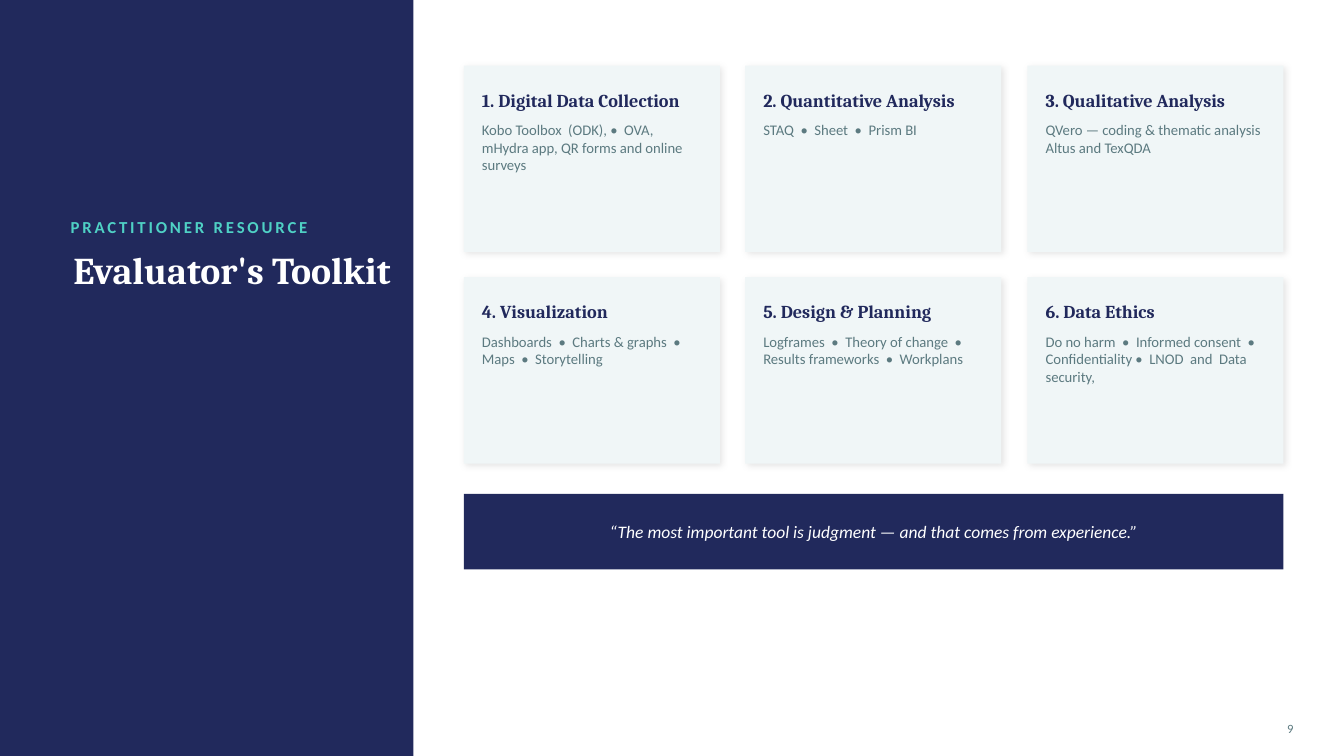
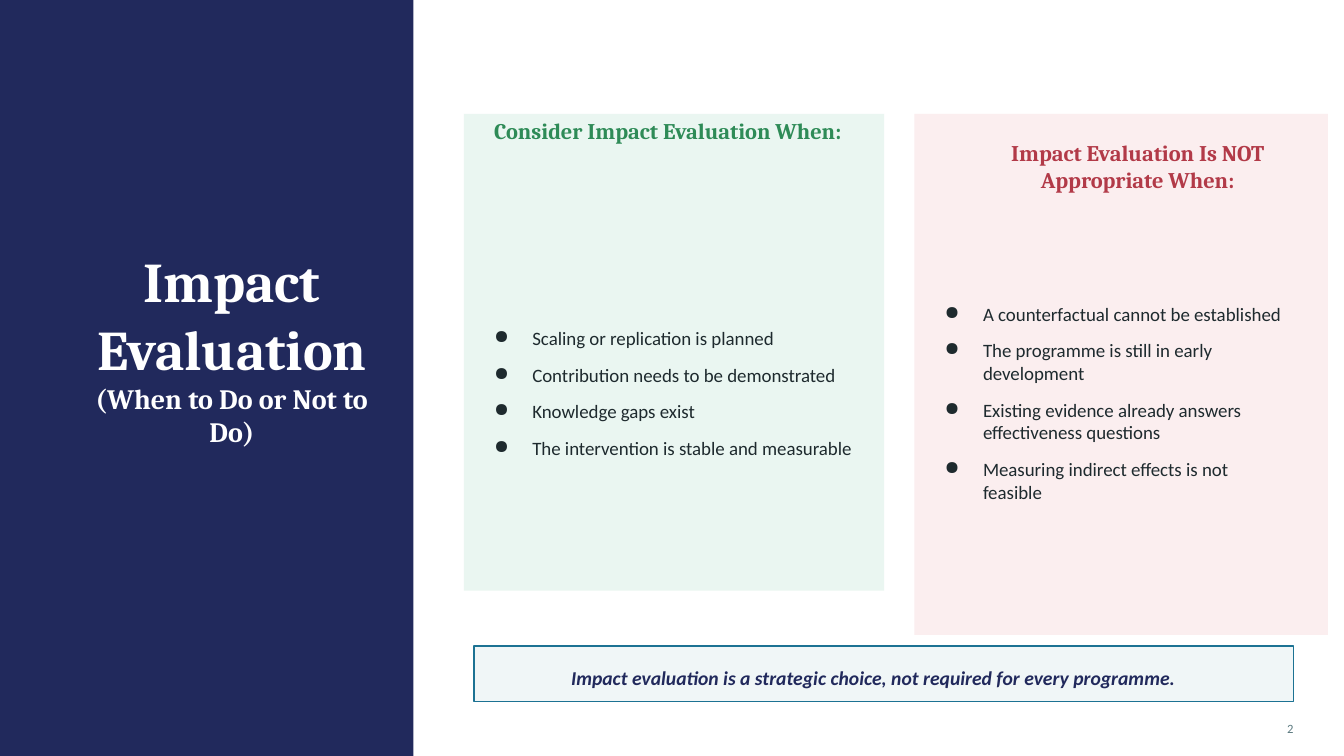
from lxml import etree
from pptx import Presentation
from pptx import util as u
from pptx.dml.color import RGBColor
from pptx.enum import shapes, text
from pptx.oxml import ns

PX = 9144
NAVY, MIST, SLATE, WHITE = "21295C", "F0F6F7", "5C7A80", "FFFFFF"
INK, TEAL, BLUE = "1E2A2E", "4FD1C5", "1C7293"
GREEN, MINT, RED, ROSE = "2E8B57", "EAF6F1", "B23A48", "FBEEEF"
HEAD, BODY = "Cambria", "Calibri"
LEFT, CENTER, RIGHT = text.PP_ALIGN.LEFT, text.PP_ALIGN.CENTER, text.PP_ALIGN.RIGHT
TOP, MIDDLE = text.MSO_ANCHOR.TOP, text.MSO_ANCHOR.MIDDLE

CARDS = [
    ("1. Digital Data Collection",
     ["Kobo Toolbox  (ODK), •  OVA, mHydra app, QR forms and online surveys"]),
    ("2. Quantitative Analysis", ["STAQ  •  Sheet  •  Prism BI"]),
    ("3. Qualitative Analysis",
     ["QVero — coding & thematic analysis", "Altus and TexQDA"]),
    ("4. Visualization",
     ["Dashboards  •  Charts & graphs  •  Maps  •  Storytelling"]),
    ("5. Design & Planning",
     ["Logframes  •  Theory of change  •  Results frameworks  •  Workplans"]),
    ("6. Data Ethics",
     ["Do no harm  •  Informed consent  •  Confidentiality •  LNOD  and  Data security,"]),
]
DO = ["Scaling or replication is planned",
      "Contribution needs to be demonstrated",
      "Knowledge gaps exist",
      "The intervention is stable and measurable"]
AVOID = ["A counterfactual cannot be established",
         "The programme is still in early development",
         "Existing evidence already answers effectiveness questions",
         "Measuring indirect effects is not feasible"]


def rgb(code):
    """Turn a hex string into a colour."""
    return RGBColor.from_string(code)


def emu(box):
    """Turn px lengths into EMU."""
    return [u.Emu(n * PX) for n in box]


def shift(box, part):
    """Place a part relative to the corner of a box."""
    return box[0] + part[0], box[1] + part[1], part[2], part[3]


def rect(slide, box, fill, line=None):
    """Draw a flat rectangle."""
    shape = slide.shapes.add_shape(shapes.MSO_SHAPE.RECTANGLE, *emu(box))
    shape.shadow.inherit = False
    shape.fill.solid()
    shape.fill.fore_color.rgb = rgb(fill)
    if line:
        shape.line.color.rgb = rgb(line)
        shape.line.width = u.Pt(1)
    else:
        shape.line.fill.background()
    return shape


def shade(shape):
    """Give a shape a soft shadow."""
    effects = shape._element.spPr.find(ns.qn("a:effectLst"))
    outer = etree.SubElement(
        effects, ns.qn("a:outerShdw"), blurRad=str(u.Pt(5)),
        dist=str(u.Pt(2)), dir="2700000", algn="bl", rotWithShape="0")
    black = etree.SubElement(outer, ns.qn("a:srgbClr"), val="000000")
    etree.SubElement(black, ns.qn("a:alpha"), val="10000")


def frame(shape, anchor):
    """Set wrapping, anchor and zero margins of a text frame."""
    body = shape.text_frame
    body.word_wrap = True
    body.auto_size = text.MSO_AUTO_SIZE.NONE
    body.vertical_anchor = anchor
    body.margin_left = body.margin_top = body.margin_right = body.margin_bottom = 0
    return body


def style(font, size, color, name=BODY, bold=False, italic=False):
    """Set the look of a font."""
    font.size, font.name = u.Pt(size), name
    font.bold, font.italic = bold, italic
    font.color.rgb = rgb(color)


def dot(para):
    """Make a paragraph a bulleted item."""
    props = para._p.get_or_add_pPr()
    props.set("marL", str(38 * PX))
    props.set("indent", str(-38 * PX))
    etree.SubElement(props, ns.qn("a:buChar"), char="●")
    para.space_after = u.Pt(10)


def write(slide, box, lines, size, color, name=BODY, bold=False, italic=False,
          align=LEFT, anchor=MIDDLE, dots=False):
    """Write paragraphs of one style in a box."""
    body = frame(slide.shapes.add_textbox(*emu(box)), anchor)
    for i, line in enumerate(lines):
        para = body.paragraphs[0] if i == 0 else body.add_paragraph()
        para.text, para.alignment = line, align
        if dots:
            dot(para)
        style(para.font, size, color, name, bold, italic)
    return body


def base(deck, parts, page):
    """Add a slide with side panel, title and page number."""
    slide = deck.slides.add_slide(deck.slide_layouts[5])
    panel = rect(slide, (0, 0, 410, 750), NAVY)
    slide.shapes._spTree.insert(2, panel._element)
    title = slide.shapes.title
    title.left, title.top, title.width, title.height = emu((70, 245, 320, 190))
    para = frame(title, TOP).paragraphs[0]
    para.alignment = CENTER
    for words, size in parts:
        run = para.add_run()
        run.text = words
        style(run.font, size, WHITE, HEAD, True)
    write(slide, (1233, 708, 50, 30), [page], 9, SLATE, align=RIGHT)
    return slide


def card(slide, box, head, lines):
    """Draw one tool card."""
    shade(rect(slide, box, MIST))
    wide = box[2] - 36
    write(slide, shift(box, (18, 14, wide, 40)), [head], 13, NAVY, HEAD, True)
    write(slide, shift(box, (18, 55, wide, 115)), lines, 10.5, SLATE, anchor=TOP)


def grid(slide, box):
    """Lay the cards out in three columns and two rows."""
    left, top, wide, high = box
    w, h = 254, 185
    for i, (head, lines) in enumerate(CARDS):
        row, col = divmod(i, 3)
        spot = left + col * (wide - w) // 2, top + row * (high - h), w, h
        card(slide, spot, head, lines)


def column(slide, box, fill, color, head, items, top, low, align=LEFT):
    """Draw a tinted column with heading and bullets."""
    rect(slide, box, fill)
    write(slide, shift(box, top), [head], 16, color, HEAD, True, align=align)
    write(slide, shift(box, low), items, 13.5, INK, dots=True)


def toolkit(deck):
    """Build the toolkit slide."""
    slide = base(deck, [("Evaluator's Toolkit", 27)], "9")
    label = write(slide, (70, 205, 320, 40), ["PRACTITIONER RESOURCE"], 12, TEAL, bold=True)
    label.paragraphs[0].runs[0]._r.get_or_add_rPr().set("spc", "200")
    grid(slide, (460, 65, 813, 395))
    rect(slide, (460, 490, 813, 75), NAVY)
    write(slide, (485, 490, 763, 75),
          ["“The most important tool is judgment — and that comes from experience.”"],
          12.5, WHITE, italic=True, align=CENTER)


def impact(deck):
    """Build the impact evaluation slide."""
    slide = base(deck, [("Impact Evaluation ", 40), ("(When to Do or Not to Do)", 20)], "2")
    column(slide, (460, 113, 417, 473), MINT, GREEN, "Consider Impact Evaluation When:",
           DO, (30, -18, 357, 70), (30, 62, 357, 430))
    column(slide, (907, 113, 410, 517), ROSE, RED,
           "Impact Evaluation Is NOT Appropriate When:",
           AVOID, (43, 17, 357, 70), (30, 110, 337, 353), CENTER)
    rect(slide, (470, 641, 813, 55), MIST, BLUE)
    write(slide, (475, 645, 783, 55),
          ["Impact evaluation is a strategic choice, not required for every programme."],
          14, NAVY, bold=True, italic=True, align=CENTER)


def main():
    """Build and save the deck."""
    deck = Presentation()
    deck.slide_width, deck.slide_height = emu((1333, 750))
    toolkit(deck)
    impact(deck)
    deck.save("out.pptx")


if __name__ == "__main__":
    main()
